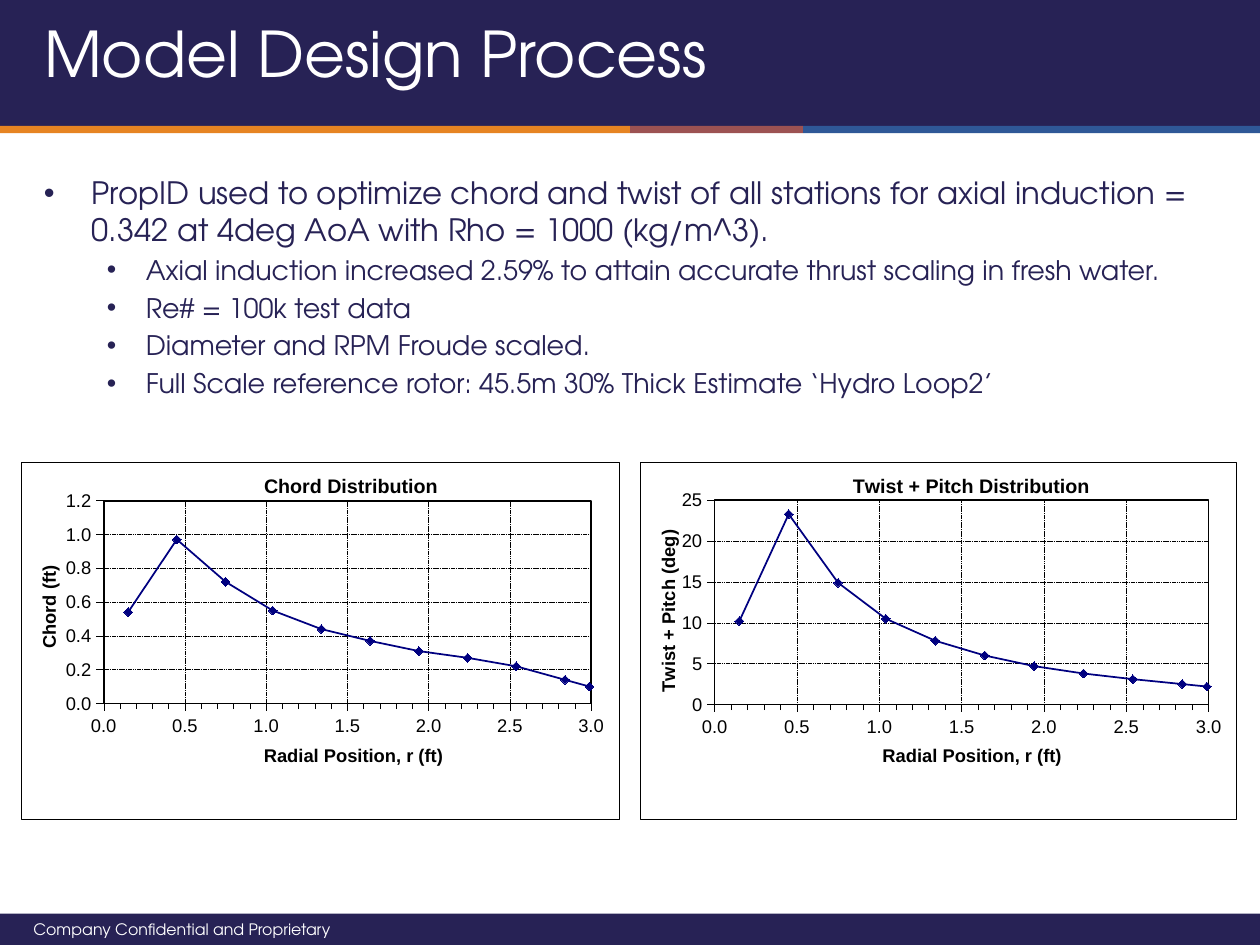
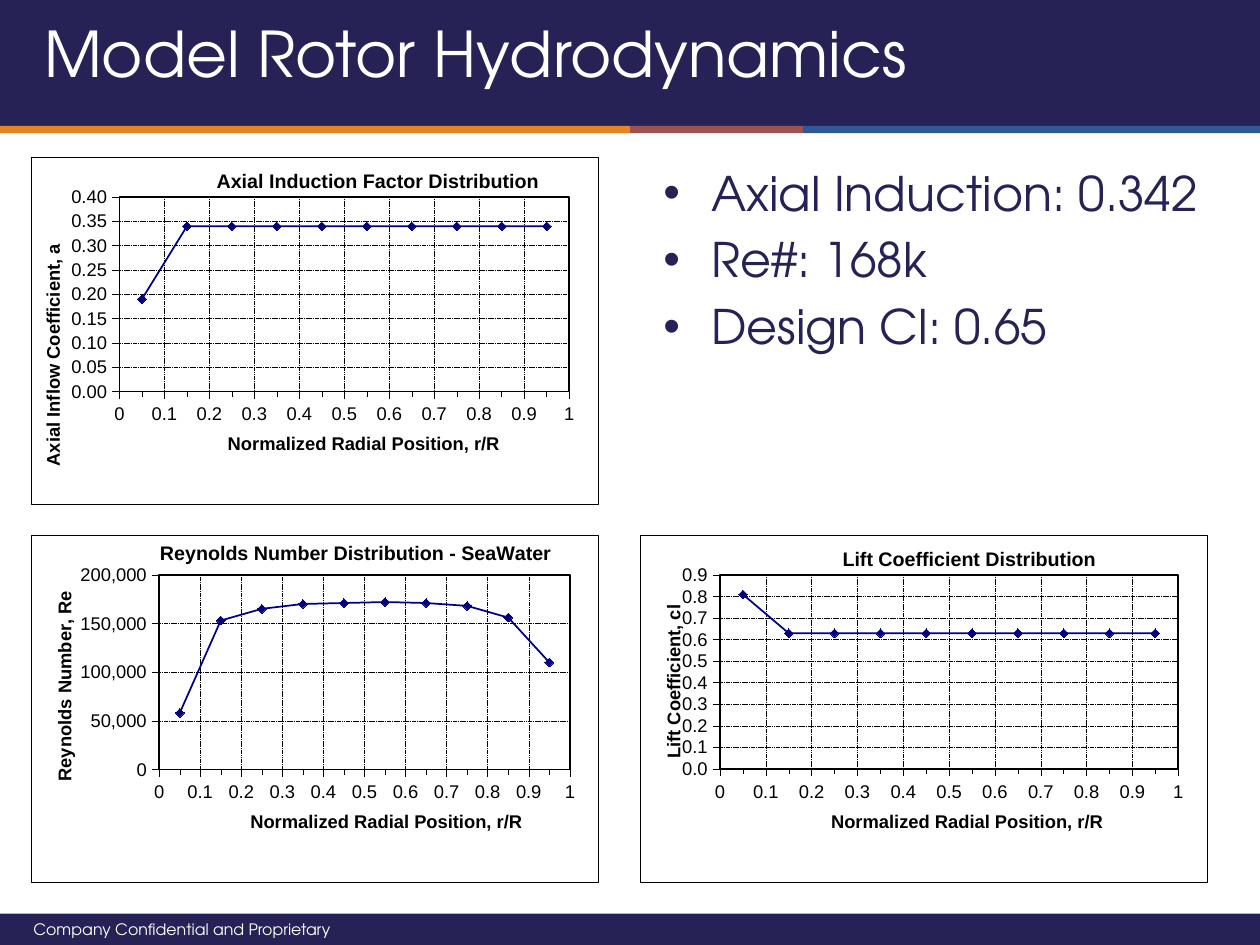
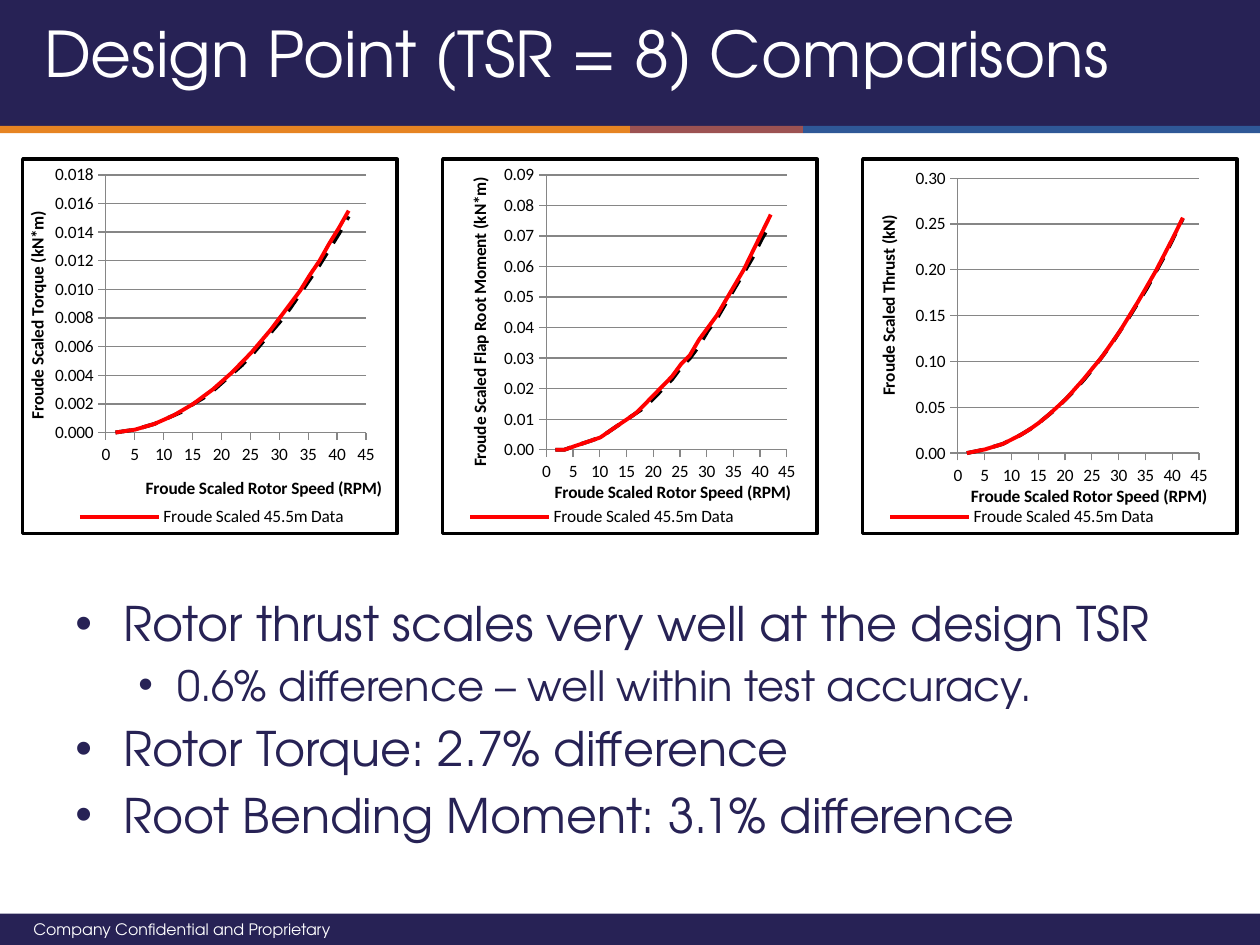
from lxml import etree
from pptx import Presentation
from pptx.chart.data import XyChartData
from pptx.dml.color import RGBColor
from pptx.enum.chart import (XL_CHART_TYPE, XL_LEGEND_POSITION, XL_MARKER_STYLE,
                             XL_TICK_LABEL_POSITION, XL_TICK_MARK)
from pptx.enum.dml import MSO_LINE
from pptx.enum.shapes import MSO_SHAPE
from pptx.enum.text import MSO_ANCHOR, MSO_AUTO_SIZE, PP_ALIGN
from pptx.oxml import parse_xml
from pptx.oxml.ns import nsdecls, qn
from pptx.util import Inches, Pt

# Enum members
RECTANGLE = MSO_SHAPE.RECTANGLE
MIDDLE, LEFT, NO_AUTOFIT = MSO_ANCHOR.MIDDLE, PP_ALIGN.LEFT, MSO_AUTO_SIZE.NONE
LINES, SMOOTH = XL_CHART_TYPE.XY_SCATTER_LINES, XL_CHART_TYPE.XY_SCATTER_SMOOTH_NO_MARKERS
DIAMOND, BOTTOM = XL_MARKER_STYLE.DIAMOND, XL_LEGEND_POSITION.BOTTOM
OUTSIDE, LOW = XL_TICK_MARK.OUTSIDE, XL_TICK_LABEL_POSITION.LOW
SYS_DASH, DASH = MSO_LINE.SQUARE_DOT, MSO_LINE.DASH

# Grid of 120 columns and 90 rows
COLUMNS, ROWS = 120, 90
CELL = Inches(10) // COLUMNS

# Shared look
NAVY, WHITE, BLACK, RED = "272255", "FFFFFF", "000000", "FF0000"
CURVE_BLUE, AXIS_GREY = "000080", "868686"
STRIPES = [("E68422", 60), ("9C5252", 16.5), ("2F5897", 43.5)]
TEXT_FONT = "TeX Gyre Adventor"
FOOTER = "Company Confidential and Proprietary"
INDENTS = [(0.38, 0.38), (0.81, 0.31)]

# Chart data
RADII_FT = [0.15, 0.45, 0.75, 1.04, 1.34, 1.64, 1.94, 2.24, 2.54, 2.84, 2.99]
CHORD = [0.54, 0.97, 0.72, 0.55, 0.44, 0.37, 0.31, 0.27, 0.22, 0.14, 0.1]
TWIST = [10.2, 23.3, 14.9, 10.5, 7.8, 6, 4.7, 3.8, 3.1, 2.5, 2.2]
RADII_SHARE = [round(0.05 + 0.1 * i, 2) for i in range(10)]
INDUCTION = [0.19] + [0.34] * 9
LIFT = [0.81] + [0.63] * 9
REYNOLDS = [58000, 153000, 165000, 170000, 171000, 172000, 171000, 168000, 156000, 110000]
SPEEDS = [round(42 / 25 * step, 2) for step in range(1, 26)]
TORQUE = [0, 0.0001, 0.0002, 0.0004, 0.0006, 0.0009, 0.0012, 0.0016, 0.002, 0.0025,
          0.003, 0.0036, 0.0042, 0.0049, 0.0056, 0.0064, 0.0072, 0.0081, 0.009, 0.0099,
          0.011, 0.012, 0.0132, 0.0143, 0.0155]
MODEL_TORQUE = [0, 0.0001, 0.0002, 0.0004, 0.0006, 0.0009, 0.0012, 0.0015, 0.002, 0.0024,
                0.0029, 0.0035, 0.0041, 0.0047, 0.0054, 0.0062, 0.007, 0.0078, 0.0087,
                0.0097, 0.0107, 0.0117, 0.0128, 0.0139, 0.0151]
MOMENT = [0, 0, 0.001, 0.002, 0.003, 0.004, 0.006, 0.008, 0.01, 0.012, 0.015, 0.018, 0.021,
          0.024, 0.028, 0.031, 0.036, 0.04, 0.044, 0.049, 0.054, 0.059, 0.065, 0.071, 0.077]
MODEL_MOMENT = [0, 0, 0.001, 0.002, 0.003, 0.004, 0.006, 0.008, 0.01, 0.012, 0.014, 0.017,
                0.02, 0.023, 0.027, 0.03, 0.034, 0.039, 0.043, 0.048, 0.053, 0.058, 0.063,
                0.069, 0.074]
THRUST = [0, 0.002, 0.004, 0.007, 0.01, 0.015, 0.02, 0.026, 0.033, 0.041, 0.05, 0.059, 0.07,
          0.081, 0.093, 0.105, 0.119, 0.133, 0.149, 0.165, 0.182, 0.199, 0.218, 0.237, 0.257]
MODEL_THRUST = [0, 0.002, 0.004, 0.007, 0.01, 0.015, 0.02, 0.026, 0.033, 0.041, 0.049, 0.059,
                0.069, 0.08, 0.092, 0.105, 0.118, 0.133, 0.148, 0.164, 0.18, 0.198, 0.216,
                0.236, 0.256]


def rgb(hex_color):
    return RGBColor.from_string(hex_color)


def on_grid(*cells):
    return [round(cell * CELL) for cell in cells]


def style_font(font, name, size, color, bold=False):
    font.name, font.size, font.bold = name, Pt(size), bold
    font.color.rgb = rgb(color)


def style_line(line, color, width, dash=None):
    line.color.rgb = rgb(color)
    line.width = Pt(width)
    if dash:
        line.dash_style = dash


# Slide frame
def add_band(slide, cells, color):
    band = slide.shapes.add_shape(RECTANGLE, *on_grid(*cells))
    band.shadow.inherit = False
    band.fill.solid()
    band.fill.fore_color.rgb = rgb(color)
    band.line.fill.background()


def add_text_box(slide, cells):
    frame = slide.shapes.add_textbox(*on_grid(*cells)).text_frame
    frame.word_wrap = True
    return frame


def add_framed_slide(deck, heading):
    slide = deck.slides.add_slide(deck.slide_layouts[5])
    add_band(slide, (0, 87, COLUMNS, 3), NAVY)
    add_band(slide, (0, 0, COLUMNS, 12), NAVY)
    left = 0
    for color, width in STRIPES:
        add_band(slide, (left, 12, width, 0.7), color)
        left += width

    footer = add_text_box(slide, (2, 87, 53, 3)).paragraphs[0]
    footer.text = FOOTER
    style_font(footer.font, TEXT_FONT, 9, WHITE)

    title = slide.shapes.title
    title.left, title.top, title.width, title.height = on_grid(3, 0, 111, 10)
    title.element.getparent().append(title.element)  # in front of the band
    frame = title.text_frame
    frame.text = heading
    frame.word_wrap, frame.auto_size = True, NO_AUTOFIT
    frame.vertical_anchor = MIDDLE
    frame.paragraphs[0].alignment = LEFT
    style_font(frame.paragraphs[0].font, TEXT_FONT, 36, WHITE)
    return slide


def add_bullets(slide, cells, items, sizes):
    """Items are (level, text); sizes holds the text size of each level."""
    frame = add_text_box(slide, cells)
    for index, (level, text) in enumerate(items):
        paragraph = frame.add_paragraph() if index else frame.paragraphs[0]
        paragraph.text = text
        paragraph.level = level
        margin, hanging = INDENTS[level]
        properties = paragraph._p.get_or_add_pPr()
        properties.set("marL", str(Inches(margin)))
        properties.set("indent", str(-Inches(hanging)))
        bullet_color = etree.SubElement(properties, qn("a:buClr"))
        etree.SubElement(bullet_color, qn("a:srgbClr"), val=NAVY)
        etree.SubElement(properties, qn("a:buFont"), typeface="Arial")
        etree.SubElement(properties, qn("a:buChar"), char="•")
        if index:
            paragraph.space_before = Pt(0.2 * sizes[level])
        style_font(paragraph.font, TEXT_FONT, sizes[level], NAVY)


# Chart parts
def layout_xml(left, top, width=None, height=None, inner=False):
    target = '<c:layoutTarget val="inner"/>' if inner else ""
    modes = '<c:xMode val="edge"/><c:yMode val="edge"/>'
    shares = zip("xywh", (left, top, width, height))
    values = "".join(f'<c:{key} val="{share}"/>' for key, share in shares if share is not None)
    return parse_xml(f'<c:layout {nsdecls("c")}><c:manualLayout>{target}{modes}{values}'
                     "</c:manualLayout></c:layout>")


def drop_layout(part):
    for old in part.findall(qn("c:layout")):
        part.remove(old)


def area_xml(border, width):
    return parse_xml(
        f'<c:spPr {nsdecls("c", "a")}><a:solidFill><a:srgbClr val="{WHITE}"/></a:solidFill>'
        f'<a:ln w="{Pt(width)}"><a:solidFill><a:srgbClr val="{border}"/></a:solidFill></a:ln>'
        "</c:spPr>")


def set_title(title, text, spot, font_name, size, upright=False):
    paragraph = title.text_frame.paragraphs[0]
    paragraph.text = text
    style_font(paragraph.font, font_name, size, BLACK, bold=True)
    part = title._element
    drop_layout(part)
    part.find(qn("c:tx")).addnext(layout_xml(*spot))
    if upright:
        body = part.find(".//" + qn("a:bodyPr"))
        body.set("rot", "-5400000")
        body.set("vert", "horz")


def add_scatter(slide, cells, kind, curves, plot, font_name, size, border_width,
                x_title, y_title, x_format, y_format):
    """Curves are (name, xs, ys); titles are (text, (left, top)) in shares of the chart."""
    data = XyChartData()
    for name, xs, ys in curves:
        curve = data.add_series(name)
        for x, y in zip(xs, ys):
            curve.add_data_point(x, y)
    chart = slide.shapes.add_chart(kind, *on_grid(*cells), data).chart
    style_font(chart.font, font_name, size, BLACK)
    chart.has_title = chart.has_legend = False
    chart.plots[0].vary_by_categories = False

    axes = [(chart.category_axis, x_title, x_format, False),
            (chart.value_axis, y_title, y_format, True)]
    for axis, (text, spot), number_format, upright in axes:
        axis.major_tick_mark = OUTSIDE
        axis.tick_labels.number_format = number_format
        axis.tick_labels.number_format_is_linked = False
        set_title(axis.axis_title, text, spot, font_name, size, upright)

    area = chart.element.find(qn("c:chart"))
    area.addnext(area_xml(BLACK, border_width))
    plot_area = area.find(qn("c:plotArea"))
    drop_layout(plot_area)
    plot_area.insert(0, layout_xml(*plot, inner=True))
    return chart


def add_distribution_chart(slide, cells, title, xs, ys, plot, x_title, y_title, y_format,
                           x_format="General", x_max=None, x_major=None, x_minor=None):
    chart = add_scatter(slide, cells, LINES, [("Series 1", xs, ys)], plot, "Arial", 10.5, 0.25,
                        x_title, y_title, x_format, y_format)
    chart.has_title = True
    set_title(chart.chart_title, *title, "Arial", 11.25)
    chart.element.find(".//" + qn("c:plotArea")).append(area_xml(BLACK, 1))

    for axis in (chart.category_axis, chart.value_axis):
        style_line(axis.format.line, BLACK, 0.25)
        axis.has_major_gridlines = True
        style_line(axis.major_gridlines.format.line, BLACK, 0.25, SYS_DASH)
    radius = chart.category_axis
    radius.minor_tick_mark = OUTSIDE
    radius.maximum_scale, radius.major_unit, radius.minor_unit = x_max, x_major, x_minor

    curve = chart.plots[0].series[0]
    style_line(curve.format.line, CURVE_BLUE, 1)
    curve.marker.style, curve.marker.size = DIAMOND, 5
    curve.marker.format.fill.solid()
    curve.marker.format.fill.fore_color.rgb = rgb(CURVE_BLUE)
    style_line(curve.marker.format.line, CURVE_BLUE, 0.75)
    return chart


def add_speed_chart(slide, cells, scaled, model, plot, x_spot, y_title, y_format, legend_left):
    curves = [("Froude Scaled 45.5m Data", SPEEDS, scaled), ("Model Data", SPEEDS, model)]
    chart = add_scatter(slide, cells, SMOOTH, curves, plot, "Calibri", 10, 2,
                        ("Froude Scaled Rotor Speed (RPM)", x_spot), y_title,
                        "General", y_format)
    chart.category_axis.has_major_gridlines = False
    chart.value_axis.has_major_gridlines = True
    for part in (chart.category_axis, chart.value_axis, chart.value_axis.major_gridlines):
        style_line(part.format.line, AXIS_GREY, 0.75)
    scaled_curve, model_curve = chart.plots[0].series
    style_line(scaled_curve.format.line, RED, 2.25)
    style_line(model_curve.format.line, BLACK, 2.25, DASH)

    # Legend without the model's entry
    chart.has_legend = True
    chart.legend.position = BOTTOM
    chart.legend.include_in_layout = False
    legend = chart.element.find(".//" + qn("c:legend"))
    drop_layout(legend)
    position = legend.find(qn("c:legendPos"))
    position.addnext(layout_xml(legend_left, 0.92, 0.75, 0.07))
    position.addnext(parse_xml(f'<c:legendEntry {nsdecls("c")}><c:idx val="1"/>'
                               '<c:delete val="1"/></c:legendEntry>'))


# Slides
def add_design_process(deck):
    slide = add_framed_slide(deck, "Model Design Process")
    add_bullets(slide, (3, 16, 115, 23), [
        (0, "PropID used to optimize chord and twist of all stations for axial induction = "
            "0.342 at 4deg AoA with Rho = 1000 (kg/m^3)."),
        (1, "Axial induction increased 2.59% to attain accurate thrust scaling in fresh water."),
        (1, "Re# = 100k test data"),
        (1, "Diameter and RPM Froude scaled."),
        (1, "Full Scale reference rotor: 45.5m 30% Thick Estimate ‘Hydro Loop2’"),
    ], (17.6, 15.4))
    radial = dict(x_format="0.0", x_max=3, x_major=0.5, x_minor=0.1)
    x_title = ("Radial Position, r (ft)", (0.4, 0.78))
    add_distribution_chart(
        slide, (2, 44, 57, 34), ("Chord Distribution", (0.4, 0.02)), RADII_FT, CHORD,
        (0.138, 0.108, 0.815, 0.569), x_title, ("Chord (ft)", (0.02, 0.28)), "0.0", **radial)
    twist = add_distribution_chart(
        slide, (61, 44, 56.8, 34), ("Twist + Pitch Distribution", (0.35, 0.02)), RADII_FT, TWIST,
        (0.124, 0.107, 0.829, 0.573), x_title, ("Twist + Pitch (deg)", (0.02, 0.18)), "0",
        **radial)
    twist.category_axis.tick_label_position = LOW


def add_hydrodynamics(deck):
    slide = add_framed_slide(deck, "Model Rotor Hydrodynamics")
    radial = dict(x_major=0.1, x_minor=0.05)
    x_text = "Normalized Radial Position, r/R"
    add_distribution_chart(
        slide, (61, 51, 54, 33), ("Lift Coefficient Distribution", (0.35, 0.02)),
        RADII_SHARE, LIFT, (0.14, 0.114, 0.809, 0.56), (x_text, (0.33, 0.78)),
        ("Lift Coefficient, cl", (0.03, 0.19)), "0.0", **radial)
    add_distribution_chart(
        slide, (3, 15, 54, 33), ("Axial Induction Factor Distribution", (0.32, 0.02)),
        RADII_SHARE, INDUCTION, (0.155, 0.114, 0.794, 0.562), (x_text, (0.34, 0.78)),
        ("Axial Inflow Coefficient, a", (0.01, 0.24)), "0.00", **radial)
    reynolds = add_distribution_chart(
        slide, (3, 51, 54, 33), ("Reynolds Number Distribution - SeaWater", (0.22, 0)),
        RADII_SHARE, REYNOLDS, (0.225, 0.113, 0.725, 0.563), (x_text, (0.38, 0.78)),
        ("Reynolds Number, Re", (0.03, 0.15)), "#,##0", **radial)
    reynolds.value_axis.minimum_scale = 0
    add_bullets(slide, (62, 15, 56, 20), [
        (0, "Axial Induction: 0.342"), (0, "Re#: 168k"), (0, "Design Cl: 0.65")], (27.2,))


def add_comparisons(deck):
    slide = add_framed_slide(deck, "Design Point (TSR = 8) Comparisons")
    add_bullets(slide, (6, 56, 108, 27.4), [
        (0, "Rotor thrust scales very well at the design TSR"),
        (1, "0.6% difference – well within test accuracy."),
        (0, "Rotor Torque: 2.7% difference"),
        (0, "Root Bending Moment: 3.1% difference"),
    ], (27.2, 23.8))
    comparisons = [
        (TORQUE, MODEL_TORQUE, (0.222, 0.042, 0.695, 0.688), (0.32, 0.84),
         ("Froude Scaled Torque (kN*m)", (0, 0.13)), "0.000", 0.13),
        (MOMENT, MODEL_MOMENT, (0.277, 0.042, 0.642, 0.734), (0.29, 0.85),
         ("Froude Scaled Flap Root Moment (kN*m)", (0.06, 0.04)), "0.00", 0.05),
        (THRUST, MODEL_THRUST, (0.254, 0.051, 0.644, 0.734), (0.28, 0.86),
         ("Froude Scaled Thrust (kN)", (0.03, 0.14)), "0.00", 0.05),
    ]
    for column, comparison in enumerate(comparisons):
        add_speed_chart(slide, (2 + 40 * column, 15, 36, 36), *comparison)


def main():
    deck = Presentation()
    deck.slide_width, deck.slide_height = on_grid(COLUMNS, ROWS)
    add_design_process(deck)
    add_hydrodynamics(deck)
    add_comparisons(deck)
    deck.save("out.pptx")


if __name__ == "__main__":
    main()
